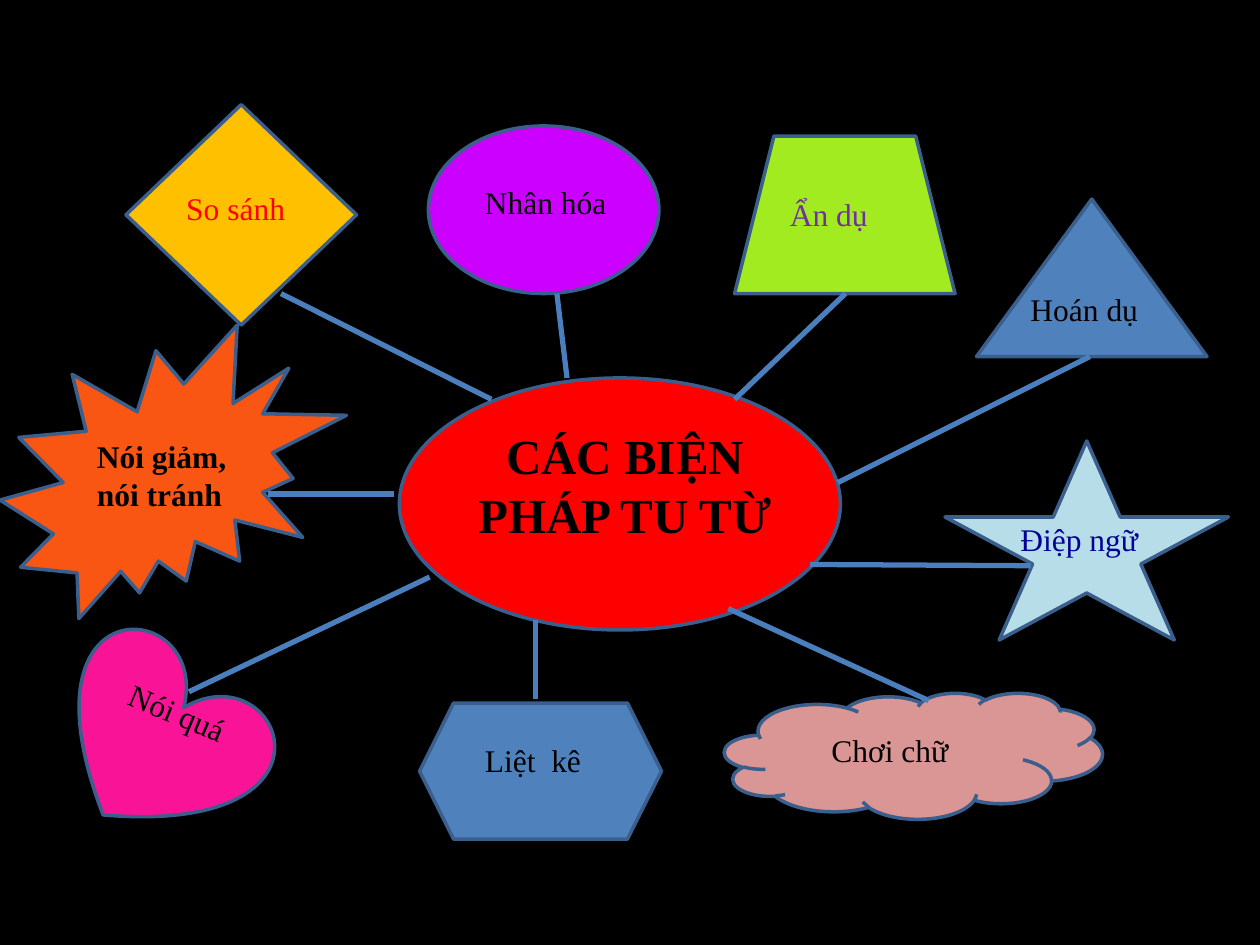
from lxml.etree import SubElement
from pptx import Presentation
from pptx.dml.color import RGBColor
from pptx.enum.shapes import MSO_CONNECTOR, MSO_SHAPE
from pptx.enum.text import MSO_ANCHOR, MSO_AUTO_SIZE, PP_ALIGN
from pptx.oxml.ns import qn
from pptx.util import Emu, Pt

EMU_PER_PX = 9144
TITLE_ONLY = 5

BRANCHES = [
    (MSO_SHAPE.DIAMOND, (100, 83, 183, 175), 0, "FFC000",
     "So sánh", (138, 145, 117, 40), 0, "FF0000", False, (390, 317, 223, 233)),
    (MSO_SHAPE.OVAL, (340, 100, 183, 133), 0, "CC00FF",
     "Nhân hóa", (375, 140, 150, 40), 0, "000000", False, (450, 300, 442, 233)),
    (MSO_SHAPE.ISOSCELES_TRIANGLE, (775, 158, 183, 125), 0, "4F81BD",
     "Hoán dụ", (808, 225, 125, 42), 0, "000000", False, (865, 283, 665, 383)),
    (MSO_SHAPE.TRAPEZOID, (583, 108, 175, 125), 0, "A3EB21",
     "Ẩn dụ", (617, 150, 142, 40), 0, "7030A0", False, (583, 317, 671, 233)),
    (MSO_SHAPE.CLOUD, (575, 550, 300, 100), 0, "D99694",
     "Chơi chữ", (650, 575, 158, 40), 0, "000000", False, (737, 556, 578, 483)),
    (MSO_SHAPE.STAR_5_POINT, (750, 350, 225, 158), 0, "B7DEE8",
     "Điệp ngữ", (800, 408, 133, 40), 0, "000099", False, (818, 449, 643, 448)),
    (MSO_SHAPE.HEXAGON, (333, 558, 192, 108), 0, "4F81BD",
     "Liệt  kê", (375, 583, 158, 40), 0, "000000", False, (425, 555, 425, 492)),
    (MSO_SHAPE.HEART, (41, 519, 167, 142), 36.9, "F91396",
     "Nói quá", (88, 560, 175, 40), 22.8, "000000", False, (341, 458, 150, 549)),
    (MSO_SHAPE.EXPLOSION2, (0, 258, 275, 233), 0, "F95513",
     "Nói giảm, nói tránh", (67, 342, 142, 71), 0, "000000", True, (313, 392, 213, 392)),
]


def px(*lengths):
    return [Emu(length * EMU_PER_PX) for length in lengths]


def color(value):
    return RGBColor.from_string(value)


class MindMap:
    """Draws mind map elements on one page in a shared style."""

    font_name = "Times New Roman"
    outline = "3A5F8C"
    link_color = "4B7EBC"

    def __init__(self, page, background):
        self.page = page
        fill = page.background.fill
        fill.solid()
        fill.fore_color.rgb = color(background)

    def shape(self, kind, place, fill, rotation=0):
        shape = self.page.shapes.add_shape(kind, *px(*place))
        shape.rotation = rotation
        shape.shadow.inherit = False
        shape.fill.solid()
        shape.fill.fore_color.rgb = color(fill)
        shape.line.color.rgb = color(self.outline)
        shape.line.width = Pt(2)
        return shape

    def set_text(self, box, text, size, ink, bold, align):
        frame = box.text_frame
        frame.text = text
        frame.word_wrap = True
        frame.auto_size = MSO_AUTO_SIZE.SHAPE_TO_FIT_TEXT
        frame.vertical_anchor = MSO_ANCHOR.TOP
        paragraph = frame.paragraphs[0]
        paragraph.alignment = align
        paragraph.font.name = self.font_name
        paragraph.font.size = Pt(size)
        paragraph.font.bold = bold
        paragraph.font.color.rgb = color(ink)

    def title(self, text, place, behind):
        title = self.page.shapes.title
        title.left, title.top, title.width, title.height = px(*place)
        self.set_text(title, text, 28, "000000", True, PP_ALIGN.CENTER)
        behind.element.addnext(title.element)

    def label(self, text, place, rotation, ink, bold):
        box = self.page.shapes.add_textbox(*px(*place))
        box.rotation = rotation
        self.set_text(box, text, 18, ink, bold, PP_ALIGN.LEFT)

    def link(self, ends):
        link = self.page.shapes.add_connector(MSO_CONNECTOR.STRAIGHT, *px(*ends))
        link.line.color.rgb = color(self.link_color)
        link.line.width = Pt(3)
        SubElement(link.element.spPr, qn("a:effectLst"))


def main():
    deck = Presentation()
    deck.slide_width, deck.slide_height = px(1000, 750)
    page = deck.slides.add_slide(deck.slide_layouts[TITLE_ONLY])
    mind_map = MindMap(page, "000000")

    hub = mind_map.shape(MSO_SHAPE.OVAL, (317, 300, 350, 200), "FF0000")
    mind_map.title("CÁC BIỆN PHÁP TU TỪ", (342, 333, 308, 103), behind=hub)

    for kind, place, turn, fill, text, text_place, text_turn, ink, bold, ends in BRANCHES:
        mind_map.shape(kind, place, fill, turn)
        mind_map.label(text, text_place, text_turn, ink, bold)
        mind_map.link(ends)

    deck.save("out.pptx")


if __name__ == "__main__":
    main()
